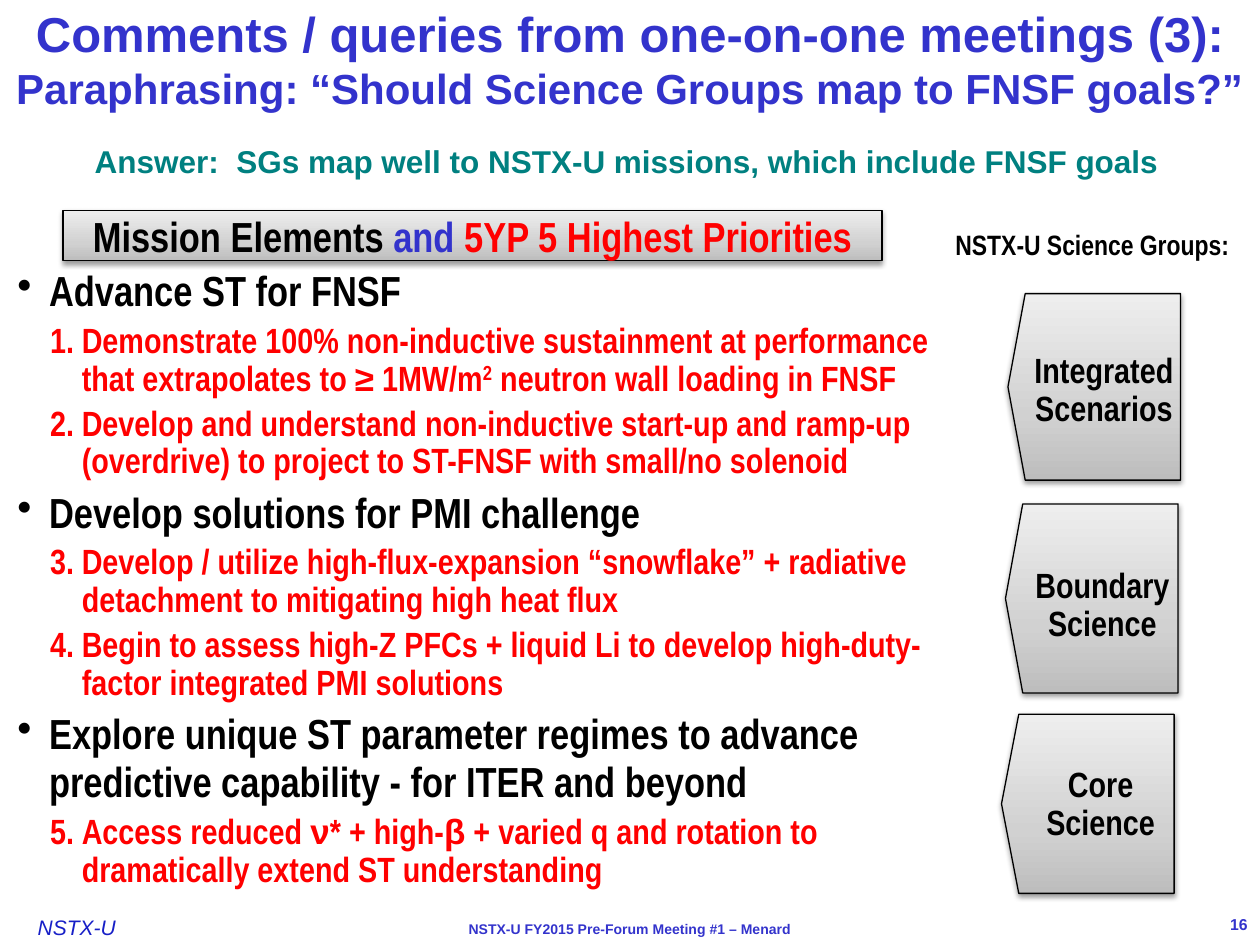
from lxml import etree
from pptx import Presentation
from pptx.dml.color import RGBColor
from pptx.enum.shapes import MSO_SHAPE as Shape
from pptx.enum.text import MSO_ANCHOR as Anchor, PP_ALIGN as Align
from pptx.oxml import parse_xml
from pptx.oxml.ns import nsdecls, qn
from pptx.util import Cm, Pt

BLUE, RED, BLACK, TEAL = "3333CC", "FF0000", "000000", "008080"
NARROW = "Arial Narrow"
GRADIENT = [(0, "BDBDBD"), (35, "D1D1D1"), (100, "EEEEEE")]


def rgb(value):
    return RGBColor.from_string(value)


def add_run(p, text, font="Arial", size=18, color=BLACK, bold=True,
            italic=False, raised=0):
    r = p.add_run()
    r.text = text
    f = r.font
    f.name, f.size, f.bold, f.italic = font, Pt(size), bold, italic
    f.color.rgb = rgb(color)
    if raised:
        r._r.get_or_add_rPr().set("baseline", str(raised * 1000))


def add_runs(p, text, **style):
    """Text is a string, or a list of (string, style changes) pairs."""
    parts = [(text, {})] if isinstance(text, str) else text
    for part, changes in parts:
        add_run(p, part, **{**style, **changes})


def add_bullet(p, left, hanging, number=None, start=1):
    pPr = p._p.get_or_add_pPr()
    pPr.set("marL", str(Cm(left)))
    pPr.set("indent", str(-Cm(hanging)))
    if number is None:
        etree.SubElement(pPr, qn("a:buChar")).set("char", "•")
    else:
        bu = etree.SubElement(pPr, qn("a:buAutoNum"))
        bu.set("type", "arabicPeriod")
        bu.set("startAt", str(start))


class Deck:
    """Holds the house style and the current slide."""

    def __init__(self):
        self.prs = Presentation()
        self.prs.slide_width, self.prs.slide_height = Cm(25.4), Cm(19.05)
        self.s = self.prs.slides.add_slide(self.prs.slide_layouts[6])

    def frame(self, sp, insets=(0.25, 0.13, 0.25, 0.13), anchor=Anchor.TOP, wrap=True):
        tf = sp.text_frame
        tf.word_wrap, tf.vertical_anchor = wrap, anchor
        (tf.margin_left, tf.margin_top,
         tf.margin_right, tf.margin_bottom) = map(Cm, insets)
        return tf

    def text(self, box, text, align=Align.CENTER, spacing=None, frame=None, **style):
        sp = self.s.shapes.add_textbox(*map(Cm, box))
        p = self.frame(sp, **(frame or {})).paragraphs[0]
        p.alignment = align
        if spacing:
            p.line_spacing = spacing
        add_runs(p, text, **style)

    def panel(self, shape, box):
        """Grey gradient shape with a thin outline and a soft shadow below."""
        sp = self.s.shapes.add_shape(shape, *map(Cm, box))
        stops = "".join(f'<a:gs pos="{pos * 1000}"><a:srgbClr val="{c}"/></a:gs>'
                        for pos, c in GRADIENT)
        spPr = sp._element.spPr
        spPr.find(qn("a:prstGeom")).addnext(parse_xml(
            f'<a:gradFill {nsdecls("a")} rotWithShape="1"><a:gsLst>{stops}</a:gsLst>'
            '<a:lin ang="16200000" scaled="0"/></a:gradFill>'))
        sp.line.color.rgb = rgb(BLACK)
        sp.line.width = Pt(0.75)
        spPr.append(parse_xml(
            f'<a:effectLst {nsdecls("a")}><a:outerShdw blurRad="{Pt(3.1)}" '
            f'dist="{Pt(1.6)}" dir="5400000" rotWithShape="0"><a:srgbClr val="{BLACK}">'
            '<a:alpha val="38000"/></a:srgbClr></a:outerShdw></a:effectLst>'))
        return sp

    def banner(self, box, text, **style):
        sp = self.panel(Shape.RECTANGLE, box)
        p = self.frame(sp, (0.25, 0, 0.25, 0)).paragraphs[0]
        p.alignment = Align.CENTER
        add_runs(p, text, **style)

    def group_arrow(self, box, tip, label_box, label):
        sp = self.panel(Shape.LEFT_ARROW, box)
        sp.adjustments[0], sp.adjustments[1] = 1, tip
        self.text(label_box, label, spacing=0.9, font=NARROW, size=20,
                  frame={"insets": (0.13, 0.13, 0, 0.13)})

    def outline(self, box, sections):
        """Bulleted missions, each followed by its numbered priorities."""
        tf = self.frame(self.s.shapes.add_textbox(*map(Cm, box)))
        p, number = tf.paragraphs[0], 1
        for mission, priorities in sections:
            if number > 1:
                p = tf.add_paragraph()
                p.space_before = Pt(4.8)
            add_bullet(p, 0.64, 0.64)
            p.line_spacing = 0.95
            add_runs(p, mission, font=NARROW, size=24)
            start = number
            for priority in priorities:
                p = tf.add_paragraph()
                add_bullet(p, 1.3, 0.64, number, start)
                p.line_spacing, p.space_before = 0.9, Pt(4)
                add_runs(p, priority, font=NARROW, size=20, color=RED)
                number += 1


SECTIONS = [
    ("Advance ST for FNSF", [
        [("Demonstrate 100% non-inductive sustainment at performance "
          "that extrapolates to ≥ 1MW/m", {}),
         ("2", {"raised": 30}),
         (" neutron wall loading in FNSF", {})],
        "Develop and understand non-inductive start-up and ramp-up "
        "(overdrive) to project to ST-FNSF with small/no solenoid"]),
    ("Develop solutions for PMI challenge", [
        "Develop / utilize high-flux-expansion “snowflake” + radiative "
        "detachment to mitigating high heat flux",
        "Begin to assess high-Z PFCs + liquid Li to develop "
        "high-duty-factor integrated PMI solutions"]),
    ("Explore unique ST parameter regimes to advance predictive capability "
     "- for ITER and beyond", [
        [("Access reduced ", {}), ("ν", {"font": "Arial"}),
         ("* + high-", {}), ("β", {"font": "Arial"}),
         (" + varied q and rotation to dramatically extend ST understanding", {})]]),
]

GROUPS = [
    ((20.32, 5.92, 3.48, 3.76), 0.1, (20.45, 6.99, 3.48, 1.8), "Integrated Scenarios"),
    ((20.27, 10.16, 3.48, 3.81), 0.1, (20.47, 11.33, 3.38, 1.8), "Boundary Science"),
    ((20.19, 14.4, 3.48, 3.61), 0.1, (20.45, 15.34, 3.35, 1.8), "Core Science"),
]


def main():
    deck = Deck()
    deck.text((0.76, 18.44, 2.21, 0.51), "NSTX-U", align=Align.LEFT, size=12,
              color="171FC7", bold=False, italic=True, frame={"insets": (0, 0, 0, 0)})
    deck.text((5.08, 18.42, 15.24, 0.61), "NSTX-U FY2015 Pre-Forum Meeting #1 – Menard",
              size=8, color=BLUE)
    deck.text((23.29, 18.42, 2.11, 0.43), "16", align=Align.RIGHT, size=9, color=BLUE,
              frame={"anchor": Anchor.MIDDLE})
    deck.text((0, 0, 25.4, 2.34),
              [("Comments / queries from one-on-one meetings (3): ", {"size": 28}),
               ("Paraphrasing: “Should Science Groups map to FNSF goals?”", {})],
              size=24, color=BLUE, frame={"anchor": Anchor.MIDDLE})
    deck.text((1.37, 2.74, 22.53, 1.02),
              "Answer:  SGs map well to NSTX-U missions, which include FNSF goals",
              color=TEAL, frame={"wrap": False})
    deck.outline((0.1, 5.28, 19.58, 12.9), SECTIONS)
    deck.banner((1.27, 4.24, 16.51, 1.02),
                [("Mission Elements ", {}), ("and ", {"color": BLUE}),
                 ("5YP 5 Highest Priorities", {"color": RED})], font=NARROW, size=24)
    deck.text((18.97, 4.45, 6.1, 0.94), "NSTX-U Science Groups:", font=NARROW, size=16,
              frame={"wrap": False})
    for group in GROUPS:
        deck.group_arrow(*group)
    deck.prs.save("out.pptx")


if __name__ == "__main__":
    main()
